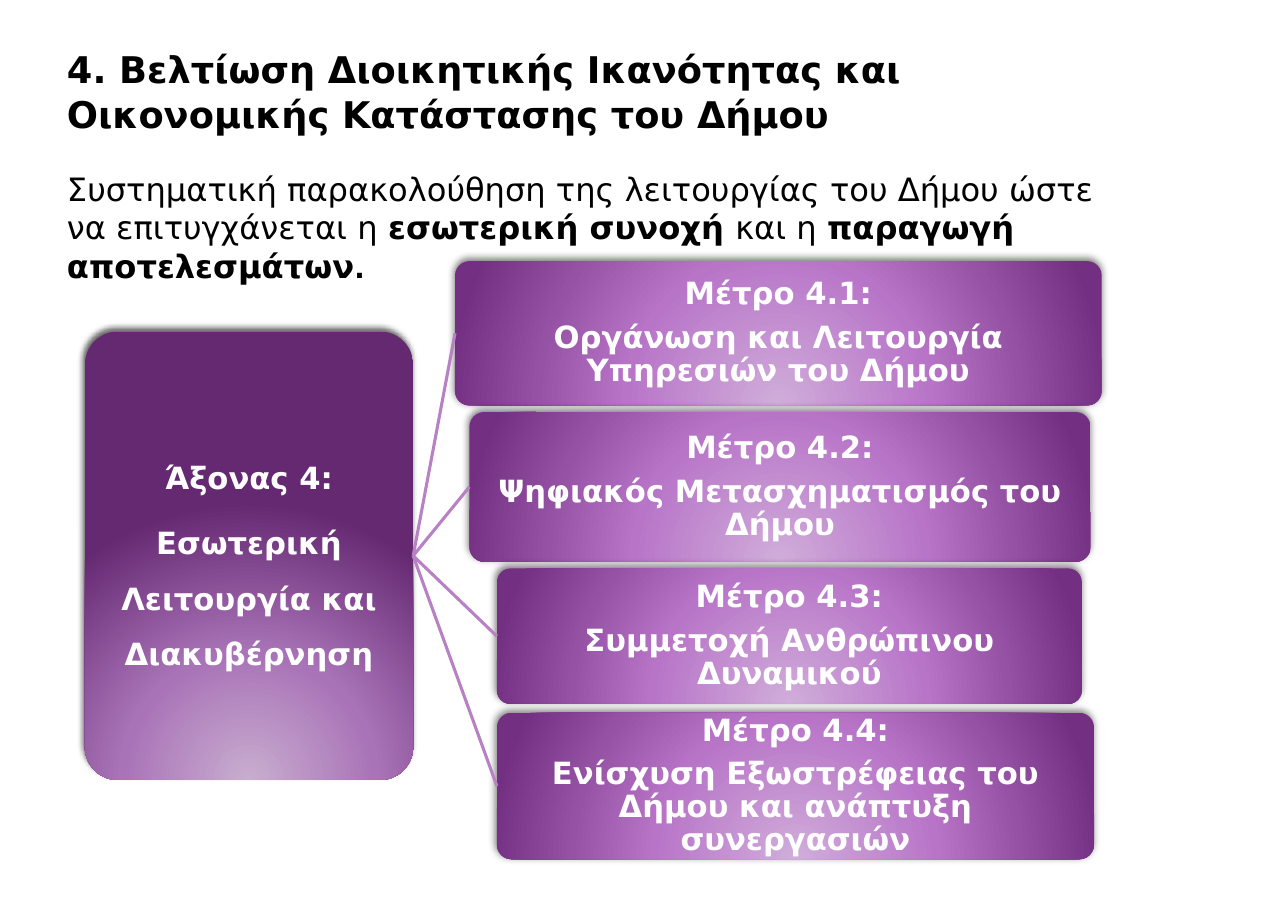
from lxml import etree
from pptx import Presentation
from pptx.dml.color import RGBColor
from pptx.enum import shapes, text
from pptx.oxml import parse_xml
from pptx.oxml.ns import nsdecls, qn
from pptx.util import Inches, Pt

FONT = "DejaVu Sans"
AXIS_STOPS = ((0, "C8ADCF"), (46, "A973B7"), (100, "652972"))
MEASURE_STOPS = ((0, "D0ADDA"), (46, "B875C8"), (100, "732F81"))
MEASURES = (
    ((4.13, 2.37, 5.87, 1.31), "Μέτρο 4.1:",
     "Οργάνωση και Λειτουργία Υπηρεσιών του Δήμου"),
    ((4.26, 3.74, 5.64, 1.36), "Μέτρο 4.2:",
     "Ψηφιακός Μετασχηματισμός του Δήμου"),
    ((4.51, 5.16, 5.31, 1.23), "Μέτρο 4.3:",
     "Συμμετοχή Ανθρώπινου Δυναμικού"),
    ((4.51, 6.47, 5.42, 1.33), "Μέτρο 4.4:",
     "Ενίσχυση Εξωστρέφειας του Δήμου και ανάπτυξη συνεργασιών"),
)


def colour(code):
    return RGBColor.from_string(code)


def add_span(para, words, size, code, bold):
    span = para.add_run()
    span.text = words
    span.font.name = FONT
    span.font.size = Pt(size)
    span.font.bold = bold
    span.font.color.rgb = colour(code)


def add_glow(shape, stops, opacity, blur, distance):
    """Give a shape a radial fill lit from below and a soft shadow above it."""
    stop_list = "".join(
        f'<a:gs pos="{place * 1000}"><a:srgbClr val="{code}"/></a:gs>'
        for place, code in stops)
    gradient = parse_xml(
        f'<a:gradFill {nsdecls("a")} rotWithShape="1"><a:gsLst>{stop_list}</a:gsLst>'
        '<a:path path="circle"><a:fillToRect l="50000" t="155000" r="50000" b="-55000"/>'
        '</a:path></a:gradFill>')
    effects = parse_xml(
        f'<a:effectLst {nsdecls("a")}><a:outerShdw blurRad="{Pt(blur)}" '
        f'dist="{Pt(distance)}" dir="{245 * 60000}" algn="tl" rotWithShape="0">'
        f'<a:srgbClr val="000000"><a:alpha val="{opacity * 1000}"/></a:srgbClr>'
        '</a:outerShdw></a:effectLst>')
    shape.line.fill.background()
    properties = shape._element.spPr
    properties.find(qn("a:prstGeom")).addnext(gradient)
    properties.find(qn("a:ln")).addnext(effects)


def add_card(page, box, lines, line_spacing):
    card = page.shapes.add_shape(
        shapes.MSO_SHAPE.ROUNDED_RECTANGLE, *map(Inches, box))
    card.adjustments[0] = 0.1
    frame = card.text_frame
    frame.word_wrap = True
    frame.vertical_anchor = text.MSO_ANCHOR.MIDDLE
    frame.margin_left = frame.margin_right = Inches(0.01)
    frame.margin_top = frame.margin_bottom = Inches(0.01)
    for index, words in enumerate(lines):
        para = frame.add_paragraph() if index else frame.paragraphs[0]
        para.alignment = text.PP_ALIGN.CENTER
        para.line_spacing = line_spacing
        para.space_after = Pt(7)
        add_span(para, words, 20, "FFFFFF", True)
    return card


def add_link(page, axis, measure):
    """Join the right side of the axis to the left side of a measure."""
    link = page.shapes.add_connector(shapes.MSO_CONNECTOR.STRAIGHT, 0, 0, 0, 0)
    link.begin_connect(axis, 3)
    link.end_connect(measure, 1)
    link.line.color.rgb = colour("B781C3")
    link.line.width = Pt(2)
    etree.SubElement(link._element.spPr, qn("a:effectLst"))


def add_hierarchy(page, box):
    axis = add_card(
        page, box, ("Άξονας 4:", "Εσωτερική Λειτουργία και Διακυβέρνηση"), 1.5)
    add_glow(axis, AXIS_STOPS, 60, 4, 3)
    for measure_box, label, words in MEASURES:
        measure = add_card(page, measure_box, (label, words), 0.9)
        add_glow(measure, MEASURE_STOPS, 50, 5, 2)
        add_link(page, axis, measure)


def add_introduction(page, box):
    frame = page.shapes.add_textbox(*map(Inches, box)).text_frame
    frame.word_wrap = True
    title = frame.paragraphs[0]
    title.space_after = Pt(22)
    add_span(title, "4. Βελτίωση Διοικητικής Ικανότητας και Οικονομικής "
             "Κατάστασης του Δήμου", 24, "000000", True)
    summary = frame.add_paragraph()
    for words, size, bold in (
        ("Συστηματική παρακολούθηση της λειτουργίας του Δήμου ώστε "
         "να επιτυγχάνεται η ", 21, False),
        ("εσωτερική συνοχή ", 21, True),
        ("και η ", 21, False),
        ("παραγωγή αποτελεσμάτων", 21, True),
        (".", 18, True),
    ):
        add_span(summary, words, size, "000000", bold)


def main():
    deck = Presentation()
    deck.slide_width, deck.slide_height = Inches(11.69), Inches(8.26)
    page = deck.slides.add_slide(deck.slide_layouts[6])
    add_hierarchy(page, (0.77, 3.01, 2.98, 4.07))
    add_introduction(page, (0.51, 0.38, 9.83, 3.33))
    deck.save("out.pptx")


if __name__ == "__main__":
    main()
